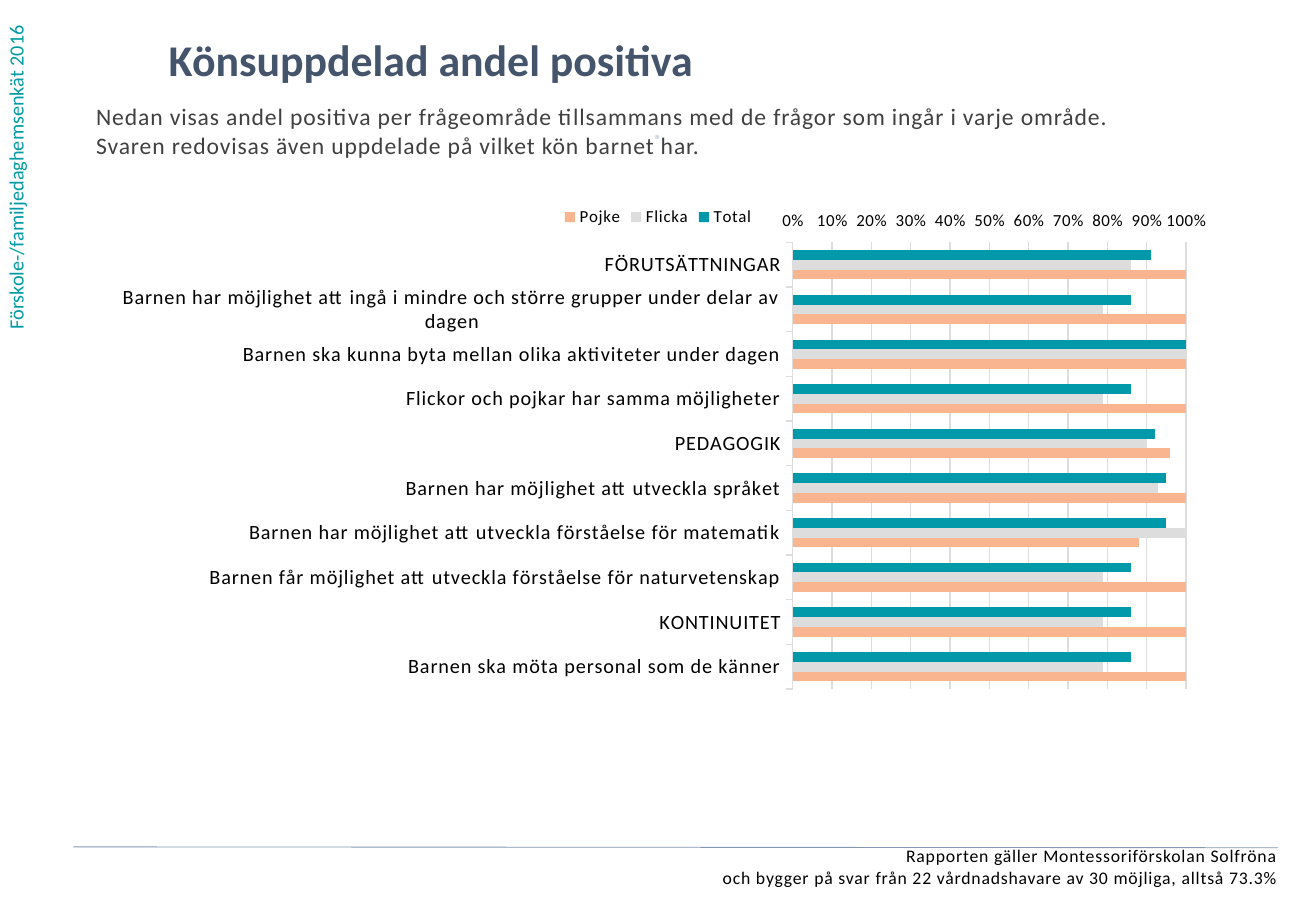
from lxml.etree import SubElement
from pptx import Presentation
from pptx.chart.data import CategoryChartData
from pptx.dml.color import RGBColor
from pptx.enum.chart import XL_AXIS_CROSSES, XL_CHART_TYPE, XL_LEGEND_POSITION, XL_TICK_MARK
from pptx.enum.shapes import MSO_CONNECTOR
from pptx.enum.text import PP_ALIGN
from pptx.oxml import parse_xml
from pptx.oxml.ns import nsdecls, qn
from pptx.util import Pt

THEME = {
    "font": "Calibri",
    "spacing": 50,
    "teal": "009BA4", "title": "44546A", "body": "404040", "black": "000000",
    "dot": "D2D9E2", "grid": "DDDDDD", "rule": "8497B0",
    "total": "0099AA", "girl": "DDDDDD", "boy": "F9B590",
    "title_size": 26, "intro_size": 14, "label_size": 12, "footer_size": 10.5, "axis_size": 10,
}

# text, (left, top, width, height), format values
TEXTS = [
    ("Förskole-/familjedaghemsenkät 2016", (-1.5, 0, 29, 202.5),
     {"size": "label_size", "color": "teal", "vertical": True}),
    ("Könsuppdelad andel positiva", (100, 19.5, 600, 41),
     {"size": "title_size", "color": "title", "bold": True}),
    ("Nedan visas andel positiva per frågeområde tillsammans med de frågor som ingår i varje område.\n"
     "Svaren redovisas även uppdelade på vilket kön barnet har.", (57, 60.5, 681, 73),
     {"size": "intro_size", "color": "body", "spaced": True}),
    ("Rapporten gäller Montessoriförskolan Solfröna\n"
     "och bygger på svar från 22 vårdnadshavare av 30 möjliga, alltså 73.3%", (8.5, 501, 749, 31),
     {"size": "footer_size", "color": "black", "spaced": True, "align": PP_ALIGN.RIGHT}),
    ("⋅", (278.5, 73.5, 222, 28),
     {"size": "label_size", "color": "dot", "bold": True, "spaced": True, "align": PP_ALIGN.CENTER}),
]

# question, total, girls, boys
ANSWERS = [
    ("FÖRUTSÄTTNINGAR", 0.91, 0.86, 1),
    ("Barnen har möjlighet att ingå i mindre och större grupper under delar av dagen", 0.86, 0.79, 1),
    ("Barnen ska kunna byta mellan olika aktiviteter under dagen", 1, 1, 1),
    ("Flickor och pojkar har samma möjligheter", 0.86, 0.79, 1),
    ("PEDAGOGIK", 0.92, 0.9, 0.96),
    ("Barnen har möjlighet att utveckla språket", 0.95, 0.93, 1),
    ("Barnen har möjlighet att utveckla förståelse för matematik", 0.95, 1, 0.88),
    ("Barnen får möjlighet att utveckla förståelse för naturvetenskap", 0.86, 0.79, 1),
    ("KONTINUITET", 0.86, 0.79, 1),
    ("Barnen ska möta personal som de känner", 0.86, 0.79, 1),
]
SERIES = [("Total", "total"), ("Flicka", "girl"), ("Pojke", "boy")]
CHART_BOX = (57, 115, 666, 319)
PLOT_AREA = {"x": 0.62, "y": 0.09, "w": 0.35, "h": 0.83}
FOOTER_RULE = (43.5, 502, 757.5, 502.5)


def rgb(name):
    return RGBColor.from_string(THEME[name])


def points(values):
    return [Pt(value) for value in values]


def set_all(target, values):
    for name, value in values.items():
        setattr(target, name, value)


def style_font(font, size, color, bold=False):
    set_all(font, {"name": THEME["font"], "size": Pt(THEME[size]), "bold": bold})
    font.color.rgb = rgb(color)


def style_line(line, color, width):
    line.color.rgb = rgb(color)
    line.width = Pt(width)


def add_text(page, text, place, style):
    box = page.shapes.add_textbox(*points(place))
    frame = box.text_frame
    frame.word_wrap = True
    if style.get("vertical"):
        frame._txBody.bodyPr.set("vert", "vert270")
    else:
        set_all(frame, dict.fromkeys(
            ("margin_left", "margin_top", "margin_right", "margin_bottom"), 0))
    para = frame.paragraphs[0]
    para.text = text
    para.alignment = style.get("align", PP_ALIGN.LEFT)
    for span in para.runs:
        style_font(span.font, style["size"], style["color"], style.get("bold", False))
        if style.get("spaced"):
            span._r.get_or_add_rPr().set("spc", str(THEME["spacing"]))


def fix_plot_area(chart):
    """Pin the inner plot area to fixed fractions of the chart."""
    parts = "".join(f'<c:{key}Mode val="edge"/>' for key in "xy")
    parts += "".join(f'<c:{key} val="{value}"/>' for key, value in PLOT_AREA.items())
    layout = parse_xml(f'<c:layout {nsdecls("c")}><c:manualLayout>'
                       f'<c:layoutTarget val="inner"/>{parts}</c:manualLayout></c:layout>')
    plot_area = chart._chartSpace.chart.plotArea
    for old in plot_area.findall(qn("c:layout")):
        plot_area.remove(old)
    plot_area.insert(0, layout)


def add_answer_chart(page):
    questions, *columns = zip(*ANSWERS)
    data = CategoryChartData(number_format="0%")
    data.categories = questions
    for (name, _), values in zip(SERIES, columns):
        data.add_series(name, values)
    chart = page.shapes.add_chart(
        XL_CHART_TYPE.BAR_CLUSTERED, *points(CHART_BOX), data).chart
    set_all(chart, {"has_title": False, "has_legend": True})
    style_font(chart.font, "axis_size", "black")
    set_all(chart.legend, {"position": XL_LEGEND_POSITION.TOP, "include_in_layout": False})
    style_font(chart.legend.font, "axis_size", "black")

    plot = chart.plots[0]
    set_all(plot, {"gap_width": 162, "vary_by_categories": False})
    for series, (_, color) in zip(plot.series, SERIES):
        series.format.fill.solid()
        series.format.fill.fore_color.rgb = rgb(color)

    category_axis, value_axis = chart.category_axis, chart.value_axis
    set_all(category_axis, {"reverse_order": True, "crosses": XL_AXIS_CROSSES.MAXIMUM,
                            "major_tick_mark": XL_TICK_MARK.OUTSIDE})
    style_line(category_axis.format.line, "grid", 0.75)
    style_font(category_axis.tick_labels.font, "label_size", "black")
    set_all(value_axis, {"minimum_scale": 0, "maximum_scale": 1, "major_unit": 0.1,
                         "has_major_gridlines": True, "major_tick_mark": XL_TICK_MARK.OUTSIDE})
    value_axis.format.line.fill.background()
    style_line(value_axis.major_gridlines.format.line, "grid", 0.75)
    style_font(value_axis.tick_labels.font, "axis_size", "black")
    set_all(value_axis.tick_labels, {"number_format": "0%", "number_format_is_linked": False})

    for properties in chart._chartSpace.iter(qn("a:defRPr")):
        properties.set("spc", str(THEME["spacing"]))
    fix_plot_area(chart)


def add_rule(page):
    rule = page.shapes.add_connector(MSO_CONNECTOR.STRAIGHT, *points(FOOTER_RULE))
    style_line(rule.line, "rule", 0.5)
    SubElement(rule._element.spPr, qn("a:effectLst"))


def main():
    deck = Presentation()
    set_all(deck, {"slide_width": Pt(780), "slide_height": Pt(540)})
    page = deck.slides.add_slide(deck.slide_layouts[6])
    for text, place, style in TEXTS:
        add_text(page, text, place, style)
    add_answer_chart(page)
    add_rule(page)
    deck.save("out.pptx")


if __name__ == "__main__":
    main()
